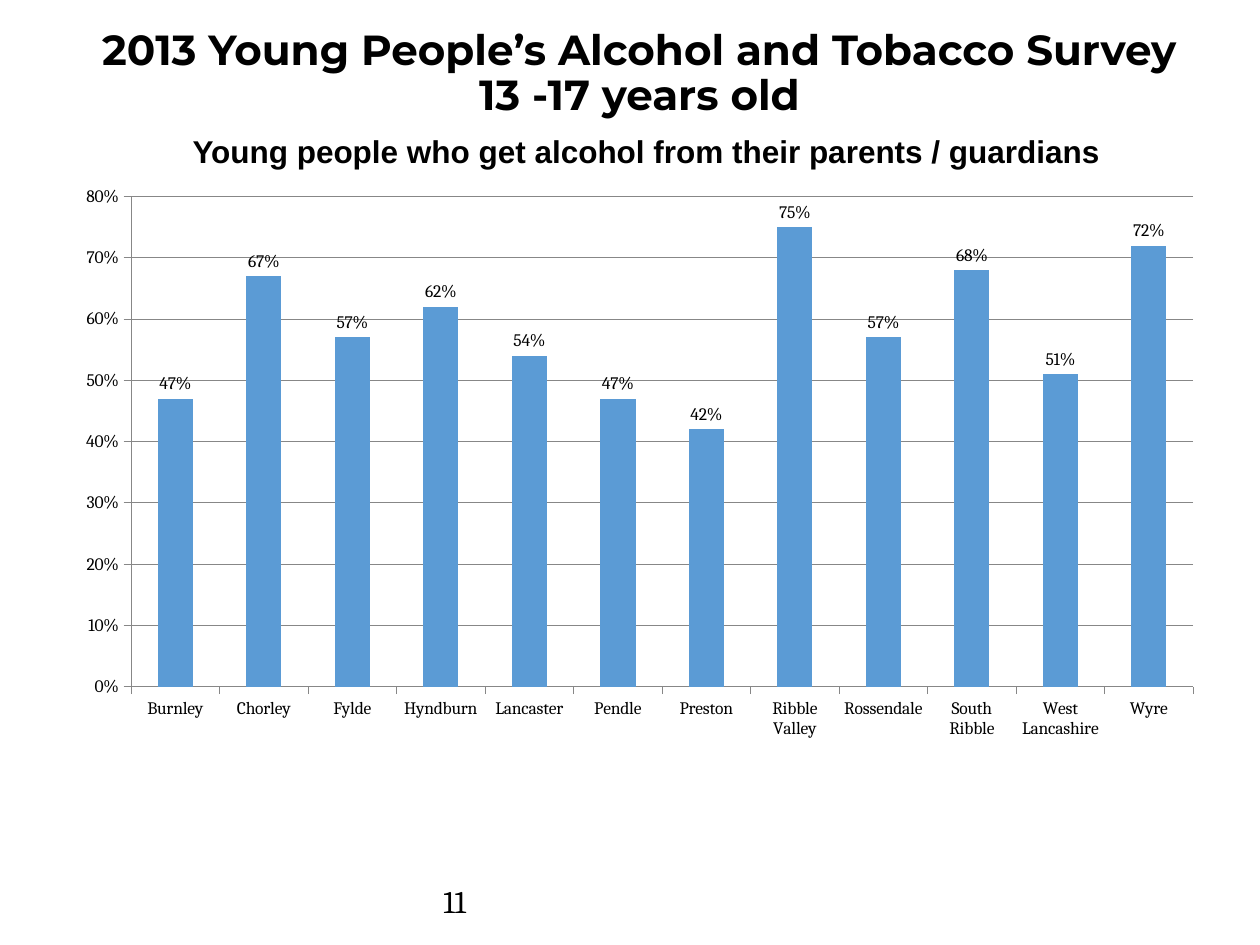
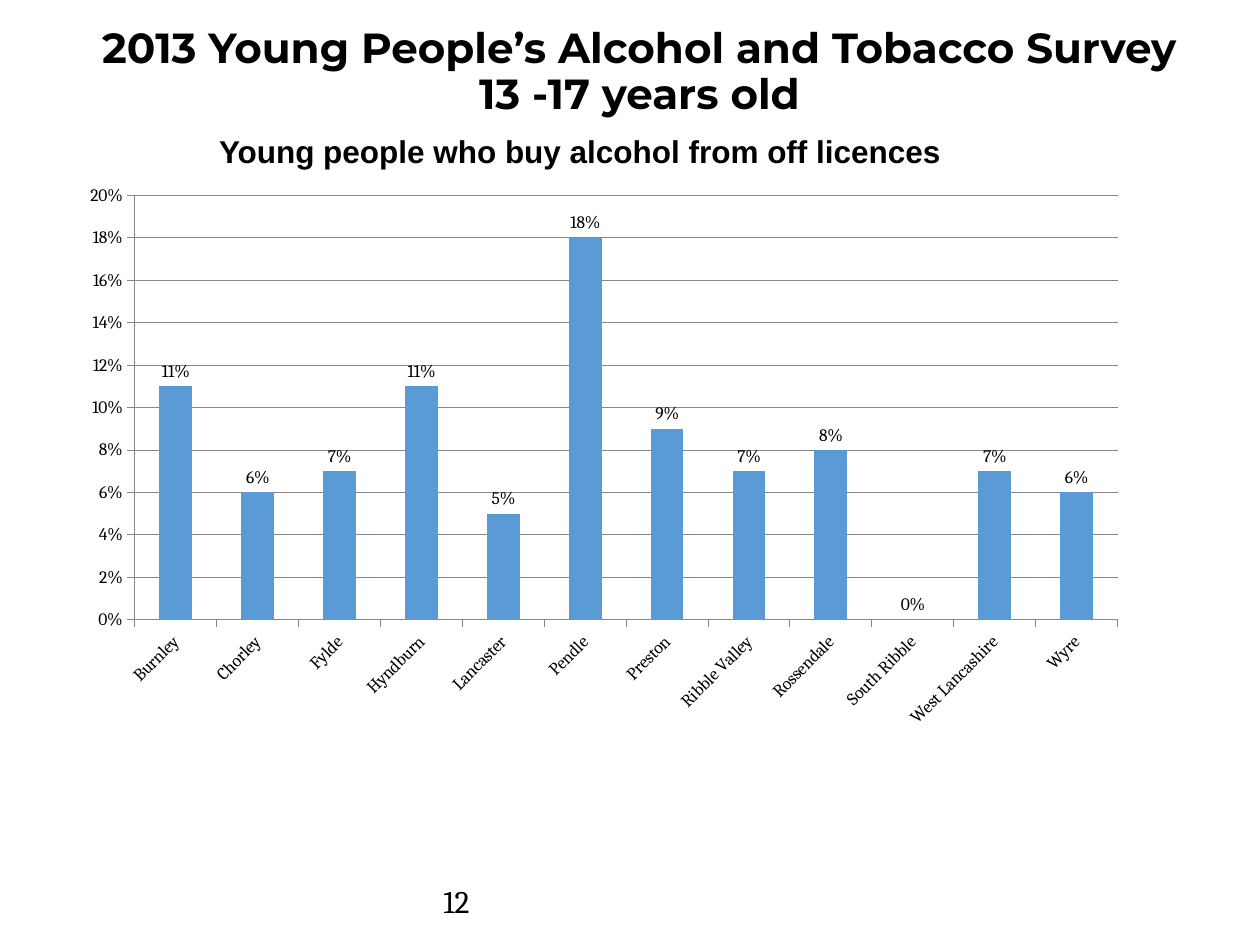
from dataclasses import dataclass
from typing import NamedTuple

from lxml import etree
from pptx import Presentation
from pptx.chart.axis import CategoryAxis, ValueAxis
from pptx.chart.chart import Chart
from pptx.chart.data import CategoryChartData
from pptx.dml.color import RGBColor
from pptx.enum.chart import XL_CHART_TYPE, XL_LABEL_POSITION, XL_TICK_MARK
from pptx.enum.text import MSO_ANCHOR, PP_ALIGN
from pptx.oxml.ns import qn
from pptx.slide import Slide
from pptx.util import Inches, Pt

COLUMNS = XL_CHART_TYPE.COLUMN_CLUSTERED
LABEL_ABOVE = XL_LABEL_POSITION.OUTSIDE_END
TICK_OUTSIDE = XL_TICK_MARK.OUTSIDE
TICK_NONE = XL_TICK_MARK.NONE
ANCHOR_TOP = MSO_ANCHOR.TOP
LEFT = PP_ALIGN.LEFT
CENTER = PP_ALIGN.CENTER


@dataclass(frozen=True)
class Theme:
    ink: RGBColor = RGBColor(0x00, 0x00, 0x00)
    paper: RGBColor = RGBColor(0xFF, 0xFF, 0xFF)
    bar: RGBColor = RGBColor(0x5B, 0x9B, 0xD5)
    rule: RGBColor = RGBColor(0x87, 0x87, 0x87)
    title_size: Pt = Pt(24)
    body_size: Pt = Pt(18)
    chart_size: Pt = Pt(10)
    rule_width: Pt = Pt(0.5)
    gap_width: int = 150
    percent: str = "0%"


class Area(NamedTuple):
    left: float
    top: float
    width: float
    height: float

    def lengths(self) -> tuple:
        return tuple(Inches(value) for value in self)


class TextStyle(NamedTuple):
    font: dict
    paragraph: dict


@dataclass(frozen=True)
class SurveySlide:
    number: int
    title_top: float
    heading: str
    heading_area: Area
    chart_area: Area
    plot_area: Area
    percentages: tuple
    axis_top: float
    axis_step: float
    label_angle: int


THEME = Theme()
TITLE = TextStyle(
    {"name": "Montserrat", "size": THEME.title_size, "bold": True},
    {"alignment": CENTER, "line_spacing": 0.9},
)
HEADING = TextStyle(
    {"name": "Arial", "size": THEME.body_size, "bold": True}, {"alignment": LEFT}
)
PAGE_NUMBER = TextStyle(
    {"name": "Cambria", "size": THEME.body_size}, {"alignment": LEFT}
)
CHART_FONT = {"name": "Cambria", "size": THEME.chart_size, "bold": False}

SURVEY_TITLE = "2013 Young People’s Alcohol and Tobacco Survey\v13 -17 years old"
NUMBER_AREA = Area(3.42, 6.95, 3.17, 0.4)
DISTRICTS = (
    "Burnley", "Chorley", "Fylde", "Hyndburn", "Lancaster", "Pendle",
    "Preston", "Ribble Valley", "Rossendale", "South Ribble",
    "West Lancashire", "Wyre",
)
SURVEY_SLIDES = (
    SurveySlide(
        number=11,
        title_top=0.18,
        heading="Young people who get alcohol from their parents / guardians",
        heading_area=Area(1.43, 1, 7.78, 0.4),
        chart_area=Area(0.51, 1.39, 9.15, 4.57),
        plot_area=Area(1.04, 1.56, 8.43, 3.89),
        percentages=(47, 67, 57, 62, 54, 47, 42, 75, 57, 68, 51, 72),
        axis_top=0.8,
        axis_step=0.1,
        label_angle=0,
    ),
    SurveySlide(
        number=12,
        title_top=0.17,
        heading="Young people who buy alcohol from off licences",
        heading_area=Area(1.64, 1, 6.04, 0.4),
        chart_area=Area(0.55, 1.46, 8.49, 4.48),
        plot_area=Area(1.07, 1.55, 7.8, 3.37),
        percentages=(11, 6, 7, 11, 5, 18, 9, 7, 8, 0, 7, 6),
        axis_top=0.2,
        axis_step=0.02,
        label_angle=-45,
    ),
)


def apply_format(target: object, values: dict) -> None:
    for name, value in values.items():
        setattr(target, name, value)


def add_text(page: Slide, area: Area, text: str, style: TextStyle) -> None:
    box = page.shapes.add_textbox(*area.lengths())
    apply_format(box.text_frame, {"word_wrap": True, "vertical_anchor": ANCHOR_TOP})
    para = box.text_frame.paragraphs[0]
    para.text = text
    apply_format(para, style.paragraph)
    for span in para.runs:
        apply_format(span.font, style.font)
        span.font.color.rgb = THEME.ink


def style_axis(axis: CategoryAxis | ValueAxis, gridlines: bool) -> None:
    apply_format(axis, {
        "major_tick_mark": TICK_OUTSIDE,
        "minor_tick_mark": TICK_NONE,
        "has_major_gridlines": gridlines,
    })
    lines = [axis.format.line]
    if gridlines:
        lines.append(axis.major_gridlines.format.line)
    for line in lines:
        line.color.rgb = THEME.rule
        line.width = THEME.rule_width
    apply_format(axis.tick_labels.font, CHART_FONT)
    axis.tick_labels.font.color.rgb = THEME.ink


def place_plot(chart: Chart, frame: Area, plot: Area) -> None:
    plot_area = chart._chartSpace.find(f"{qn('c:chart')}/{qn('c:plotArea')}")
    for layout in plot_area.findall(qn("c:layout")):
        plot_area.remove(layout)
    layout = etree.Element(qn("c:layout"))
    plot_area.insert(0, layout)
    manual = etree.SubElement(layout, qn("c:manualLayout"))
    settings = {
        "layoutTarget": "inner",
        "xMode": "edge",
        "yMode": "edge",
        "x": (plot.left - frame.left) / frame.width,
        "y": (plot.top - frame.top) / frame.height,
        "w": plot.width / frame.width,
        "h": plot.height / frame.height,
    }
    for name, value in settings.items():
        etree.SubElement(manual, qn(f"c:{name}")).set("val", str(value))


def add_survey_chart(page: Slide, survey: SurveySlide) -> None:
    data = CategoryChartData(number_format=THEME.percent)
    data.categories = DISTRICTS
    data.add_series("Series 1", [value / 100 for value in survey.percentages])
    chart = page.shapes.add_chart(COLUMNS, *survey.chart_area.lengths(), data).chart
    apply_format(chart, {"has_legend": False, "has_title": False})
    apply_format(chart.font, CHART_FONT)
    chart.font.color.rgb = THEME.ink
    place_plot(chart, survey.chart_area, survey.plot_area)

    style_axis(chart.category_axis, gridlines=False)
    body = chart.category_axis._element.find(f"{qn('c:txPr')}/{qn('a:bodyPr')}")
    body.set("rot", str(survey.label_angle * 60000))
    body.set("vert", "horz")

    style_axis(chart.value_axis, gridlines=True)
    apply_format(chart.value_axis, {
        "minimum_scale": 0,
        "maximum_scale": survey.axis_top,
        "major_unit": survey.axis_step,
    })
    number_format = {"number_format": THEME.percent, "number_format_is_linked": False}
    apply_format(chart.value_axis.tick_labels, number_format)

    plot = chart.plots[0]
    apply_format(plot, {
        "gap_width": THEME.gap_width,
        "vary_by_categories": False,
        "has_data_labels": True,
    })
    apply_format(plot.data_labels, {
        **number_format, "show_value": True, "position": LABEL_ABOVE,
    })
    apply_format(plot.data_labels.font, CHART_FONT)
    plot.data_labels.font.color.rgb = THEME.ink
    bars = plot.series[0]
    bars.invert_if_negative = False
    bars.format.fill.solid()
    bars.format.fill.fore_color.rgb = THEME.bar


def add_survey_slide(deck: Presentation, survey: SurveySlide) -> None:
    page = deck.slides.add_slide(deck.slide_layouts[6])
    page.background.fill.solid()
    page.background.fill.fore_color.rgb = THEME.paper
    add_text(page, NUMBER_AREA, str(survey.number), PAGE_NUMBER)
    add_survey_chart(page, survey)
    add_text(page, survey.heading_area, survey.heading, HEADING)
    title_area = Area(0.36, survey.title_top, 9.43, 1.06)
    add_text(page, title_area, SURVEY_TITLE, TITLE)


def main() -> None:
    deck = Presentation()
    deck.slide_width = Inches(10)
    deck.slide_height = Inches(7.5)
    for survey in SURVEY_SLIDES:
        add_survey_slide(deck, survey)
    deck.save("out.pptx")


if __name__ == "__main__":
    main()
